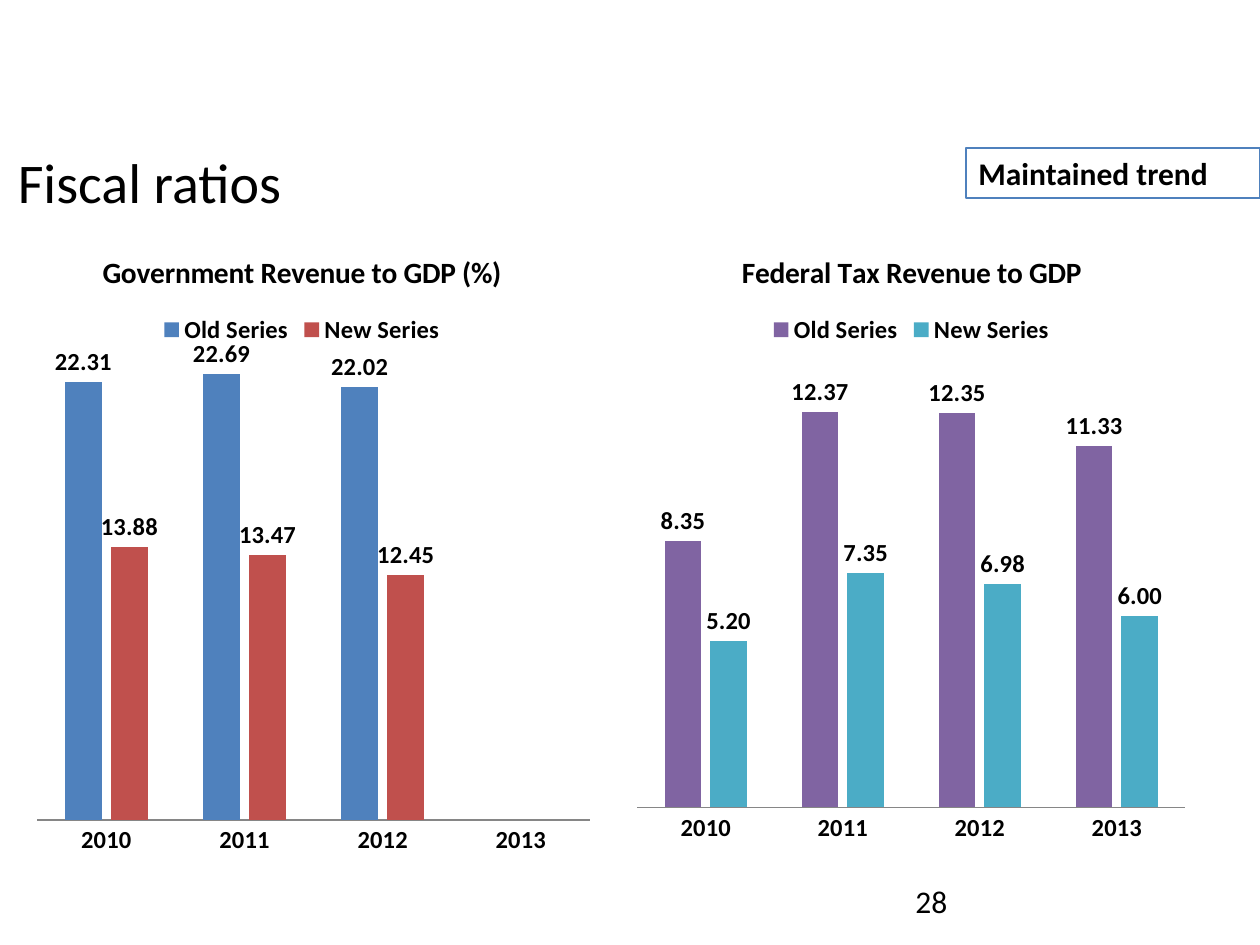
from lxml import etree
from pptx import Presentation
from pptx.chart.data import CategoryChartData
from pptx.dml.color import RGBColor
from pptx.enum.chart import (XL_CHART_TYPE, XL_LABEL_POSITION,
                             XL_LEGEND_POSITION, XL_TICK_MARK)
from pptx.enum.shapes import MSO_SHAPE
from pptx.enum.text import MSO_ANCHOR, PP_ALIGN
from pptx.oxml.ns import qn
from pptx.util import Pt

COLUMN = XL_CHART_TYPE.COLUMN_CLUSTERED
TOP = XL_LEGEND_POSITION.TOP
ABOVE = XL_LABEL_POSITION.OUTSIDE_END
NO_TICK = XL_TICK_MARK.NONE
RECT = MSO_SHAPE.RECTANGLE
MIDDLE = MSO_ANCHOR.MIDDLE
LEFT, RIGHT = PP_ALIGN.LEFT, PP_ALIGN.RIGHT

# Content
TITLE = "Fiscal ratios"
NOTE = "Maintained trend"
PAGE = "28"
YEARS = ["2010", "2011", "2012", "2013"]
CHARTS = [
    {"title": "Government Revenue to GDP (%)",
     "box": (8, 228, 588, 630), "plot": (0.05, 0.16, 0.94, 0.78), "max": 25,
     "series": [("Old Series", "blue", [22.31, 22.69, 22.02, None]),
                ("New Series", "red", [13.88, 13.47, 12.45, None])]},
    {"title": "Federal Tax Revenue to GDP",
     "box": (626, 228, 571, 630), "plot": (0.02, 0.21, 0.96, 0.71), "max": 14,
     "series": [("Old Series", "purple", [8.35, 12.37, 12.35, 11.33]),
                ("New Series", "teal", [5.20, 7.35, 6.98, 6.00])]},
]

# Format
COLORS = {"text": "000000", "axis": "868686", "blue": "4F81BD",
          "red": "C0504D", "purple": "8064A2", "teal": "4BACC6"}
FACE = "Calibri"
PX = 914400 / 126


def emu(*sizes):
    return [round(size * PX) for size in sizes]


def color(name):
    return RGBColor.from_string(COLORS[name])


def set_font(font, size, bold=False):
    for key, value in {"name": FACE, "size": Pt(size), "bold": bold}.items():
        setattr(font, key, value)
    font.color.rgb = color("text")


def write(shape, text, size, bold=False, align=LEFT):
    frame = shape.text_frame
    frame.text = text
    frame.word_wrap = True
    frame.vertical_anchor = MIDDLE
    para = frame.paragraphs[0]
    para.alignment = align
    set_font(para.runs[0].font, size, bold)


def place_plot(chart, plot):
    area = chart._chartSpace.find(".//" + qn("c:plotArea"))
    for old in area.findall(qn("c:layout")):
        area.remove(old)
    layout = etree.Element(qn("c:layout"))
    manual = etree.SubElement(layout, qn("c:manualLayout"))
    parts = [("layoutTarget", "inner"), ("xMode", "edge"), ("yMode", "edge")]
    for tag, value in parts + list(zip("xywh", plot)):
        etree.SubElement(manual, qn("c:" + tag)).set("val", str(value))
    area.insert(0, layout)


def add_columns(slide, item):
    data = CategoryChartData(number_format="0.00")
    data.categories = YEARS
    for name, _, values in item["series"]:
        data.add_series(name, values)
    chart = slide.shapes.add_chart(COLUMN, *emu(*item["box"]), data).chart
    set_font(chart.font, 14, True)
    place_plot(chart, item["plot"])

    # Title and legend
    chart.has_title = True
    frame = chart.chart_title.text_frame
    frame.text = item["title"]
    set_font(frame.paragraphs[0].runs[0].font, 16.8, True)
    chart.has_legend = True
    chart.legend.position = TOP
    chart.legend.include_in_layout = False

    # Axes
    years, scale = chart.category_axis, chart.value_axis
    years.major_tick_mark = NO_TICK
    years.format.line.color.rgb = color("axis")
    for key, value in {"visible": False, "has_major_gridlines": False,
                       "minimum_scale": 0,
                       "maximum_scale": item["max"]}.items():
        setattr(scale, key, value)

    # Columns and their labels
    plot = chart.plots[0]
    for key, value in {"gap_width": 150, "overlap": -25,
                       "vary_by_categories": False,
                       "has_data_labels": True}.items():
        setattr(plot, key, value)
    for key, value in {"show_value": True, "position": ABOVE,
                       "number_format": "0.00",
                       "number_format_is_linked": False}.items():
        setattr(plot.data_labels, key, value)
    for series, (_, shade, _) in zip(plot.series, item["series"]):
        series.format.fill.solid()
        series.format.fill.fore_color.rgb = color(shade)


def main():
    deck = Presentation()
    deck.slide_width, deck.slide_height = emu(1260, 945)
    slide = deck.slides.add_slide(deck.slide_layouts[5])

    # Charts
    for item in CHARTS:
        add_columns(slide, item)

    # Title
    title = slide.shapes.title
    title.left, title.top, title.width, title.height = emu(0, 134, 294, 94)
    write(title, TITLE, 32, align=RIGHT)

    # Framed note
    note = slide.shapes.add_shape(RECT, *emu(966, 148, 294, 50))
    note.shadow.inherit = False
    note.fill.background()
    note.line.color.rgb = color("blue")
    note.line.width = Pt(0.75)
    write(note, NOTE, 18, True)

    # Page number
    page = slide.shapes.add_textbox(*emu(903, 876, 294, 50))
    write(page, PAGE, 18)

    deck.save("out.pptx")


if __name__ == "__main__":
    main()
